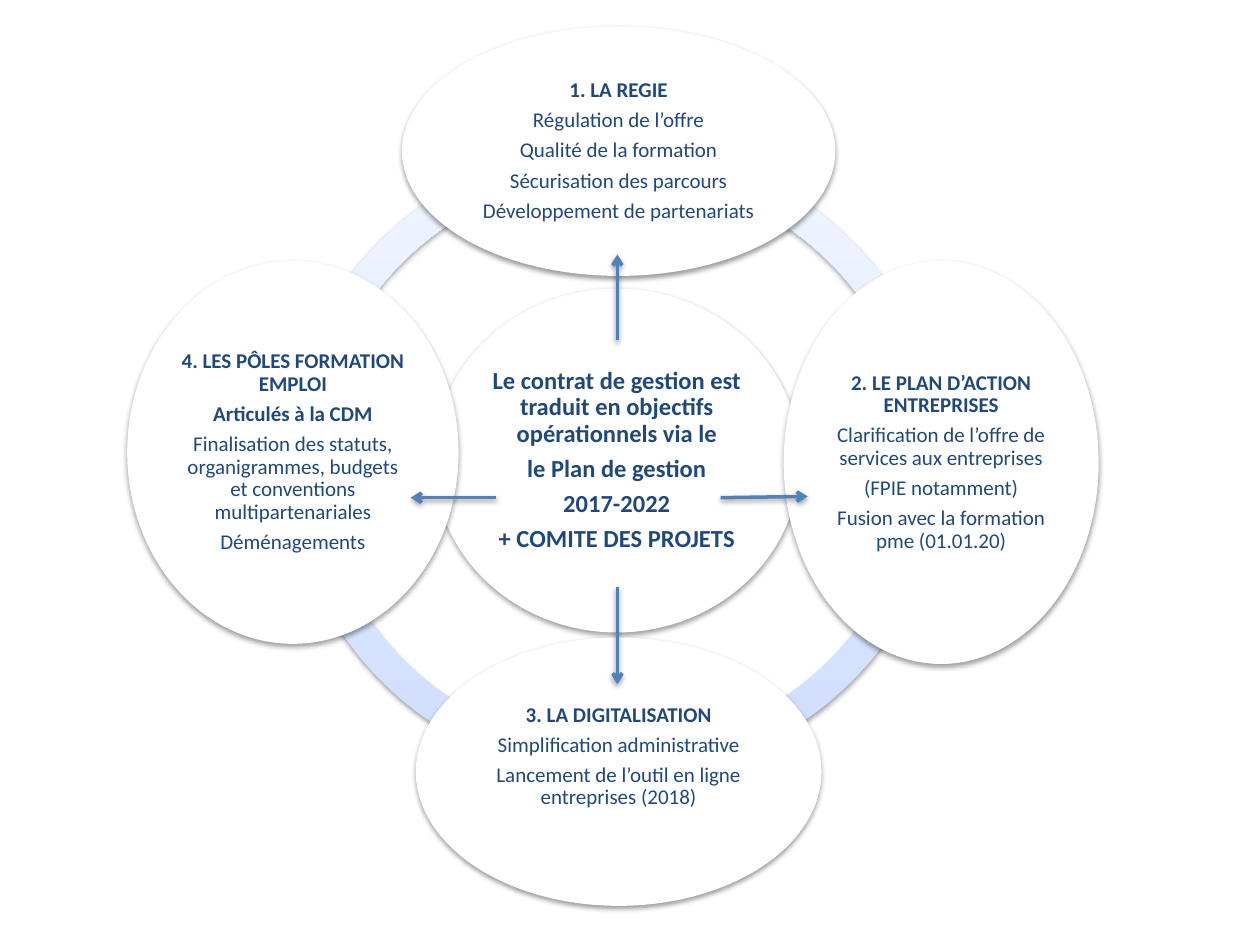
from dataclasses import dataclass
from math import sqrt

from pptx import Presentation
from pptx.dml.color import RGBColor
from pptx.enum.shapes import MSO_CONNECTOR, MSO_SHAPE
from pptx.enum.text import MSO_ANCHOR, PP_ALIGN
from pptx.oxml import parse_xml
from pptx.oxml.ns import nsdecls, qn
from pptx.util import Inches, Pt


@dataclass(frozen=True)
class Theme:
    """Colours, font and type sizes of the slide."""
    font: str = "Calibri"
    text: str = "1F497D"
    arrow: str = "4F81BD"
    disc: str = "FFFFFF"
    ring: tuple = ((0, "CDDDFE"), (35, "DBE6FE"), (100, "F0F5FF"))
    centre_size: int = 14
    topic_size: int = 12


THEME = Theme()
RING_SIZE = 5.27
INSET = 0.02

RING_ARCS = [
    (2.25, 1.14, 110.505, 162.335),
    (2.26, 0.91, 53.752, 107.467),
    (2.26, 0.91, 1.602, 53.793),
    (2.26, 1.14, 162.214, 214.565),
]

CENTRE = ((3.44, 2.29, 2.91, 2.73), [
    "Le contrat de gestion est traduit en objectifs opérationnels via le",
    "le Plan de gestion",
    "2017-2022",
    "+ COMITE DES PROJETS",
])

TOPICS = [
    ((3.19, 0.21, 3.44, 1.98), ["1. LA REGIE"], [
        "Régulation de l’offre",
        "Qualité de la formation",
        "Sécurisation des parcours",
        "Développement de partenariats",
    ], 0),
    ((6.22, 2.07, 2.5, 3.2), ["2. LE PLAN D’ACTION ENTREPRISES"], [
        "Clarification de l’offre de services aux entreprises",
        "(FPIE notamment)",
        "Fusion avec la formation pme (01.01.20)",
    ], 0),
    ((3.3, 5.06, 3.22, 2.13), ["3. LA DIGITALISATION"], [
        "Simplification administrative",
        "Lancement de l’outil en ligne entreprises (2018)",
    ], 0.24),
    ((1.01, 2.07, 2.63, 3.04),
     ["4. LES PÔLES FORMATION EMPLOI", "Articulés à la CDM"], [
        "Finalisation des statuts, organigrammes, budgets et conventions multipartenariales",
        "Déménagements",
    ], 0),
]

ARROWS = [
    (5.72, 3.95, 6.41, 3.94),
    (4.9, 4.66, 4.9, 5.43),
    (3.94, 3.95, 3.26, 3.95),
    (4.9, 2.7, 4.9, 2.02),
]


def add_shadow(properties):
    """Give shape properties a soft shadow that falls straight down."""
    properties.append(parse_xml(
        f'<a:effectLst {nsdecls("a")}>'
        f'<a:outerShdw blurRad="{Pt(3.1)}" dist="{Pt(1.6)}" dir="5400000" rotWithShape="0">'
        '<a:srgbClr val="000000"><a:alpha val="38000"/></a:srgbClr>'
        '</a:outerShdw></a:effectLst>'))


def add_ring_arc(page, left, top, start, end):
    """Add one gradient segment of the ring."""
    arc = page.shapes.add_shape(
        MSO_SHAPE.BLOCK_ARC, *map(Inches, (left, top, RING_SIZE, RING_SIZE)))
    for index, value in enumerate((start, end, 0.046)):
        arc.adjustments[index] = value
    stops = "".join(
        f'<a:gs pos="{position * 1000}"><a:srgbClr val="{colour}"/></a:gs>'
        for position, colour in THEME.ring)
    properties = arc.element.spPr
    properties.find(qn("a:prstGeom")).addnext(parse_xml(
        f'<a:gradFill {nsdecls("a")} rotWithShape="1"><a:gsLst>{stops}</a:gsLst>'
        '<a:lin ang="16200000" scaled="0"/></a:gradFill>'))
    arc.line.fill.background()
    add_shadow(properties)


def add_disc(page, bounds):
    """Add a white ellipse with a shadow."""
    disc = page.shapes.add_shape(MSO_SHAPE.OVAL, *map(Inches, bounds))
    disc.fill.solid()
    disc.fill.fore_color.rgb = RGBColor.from_string(THEME.disc)
    disc.line.fill.background()
    add_shadow(disc.element.spPr)


def add_disc_text(page, bounds, lines, size, lift=0):
    """Write (text, bold) lines in the rectangle inscribed in an ellipse."""
    left, top, width, height = bounds
    margin = (1 - 1 / sqrt(2)) / 2
    box = page.shapes.add_textbox(
        Inches(left + width * margin), Inches(top + height * margin),
        Inches(width / sqrt(2)), Inches(height / sqrt(2)))
    frame = box.text_frame
    frame.word_wrap = True
    frame.vertical_anchor = MSO_ANCHOR.MIDDLE
    frame.margin_left = frame.margin_right = frame.margin_top = Inches(INSET)
    frame.margin_bottom = Inches(INSET + lift)
    for index, (text, bold) in enumerate(lines):
        para = frame.add_paragraph() if index else frame.paragraphs[0]
        para.alignment = PP_ALIGN.CENTER
        para.line_spacing = 0.9
        para.space_after = Pt(size * 0.35)
        span = para.add_run()
        span.text = text
        span.font.name = THEME.font
        span.font.size = Pt(size)
        span.font.bold = bold
        span.font.color.rgb = RGBColor.from_string(THEME.text)


def add_arrow(page, *ends):
    """Add an arrow from the centre towards a topic."""
    arrow = page.shapes.add_connector(MSO_CONNECTOR.STRAIGHT, *map(Inches, ends))
    arrow.line.color.rgb = RGBColor.from_string(THEME.arrow)
    arrow.line.width = Pt(2)
    properties = arrow.element.spPr
    properties.find(qn("a:ln")).append(
        parse_xml(f'<a:tailEnd {nsdecls("a")} type="arrow"/>'))
    add_shadow(properties)


def main():
    """Build the management plan diagram."""
    deck = Presentation()
    deck.slide_width, deck.slide_height = Inches(10), Inches(7.5)
    page = deck.slides.add_slide(deck.slide_layouts[6])
    for arc in RING_ARCS:
        add_ring_arc(page, *arc)
    bounds, statements = CENTRE
    add_disc(page, bounds)
    add_disc_text(page, bounds, [(text, True) for text in statements], THEME.centre_size)
    for bounds, headings, details, lift in TOPICS:
        lines = [(text, True) for text in headings] + [(text, False) for text in details]
        add_disc(page, bounds)
        add_disc_text(page, bounds, lines, THEME.topic_size, lift)
    for ends in ARROWS:
        add_arrow(page, *ends)
    deck.save("out.pptx")


if __name__ == "__main__":
    main()
